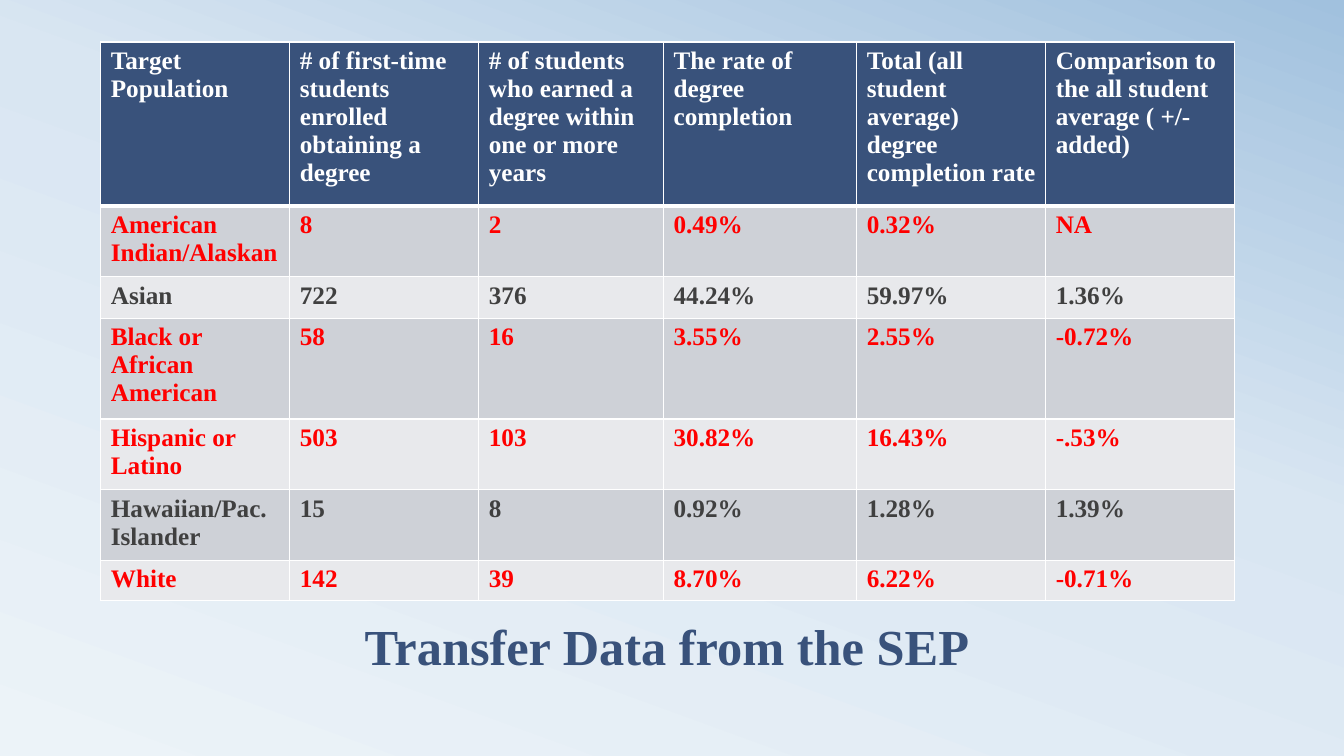
"""Build a slide with a table of transfer data by target population."""
from copy import deepcopy

from pptx import Presentation
from pptx.dml.color import RGBColor
from pptx.enum.text import MSO_ANCHOR, PP_ALIGN
from pptx.oxml import parse_xml
from pptx.oxml.ns import nsdecls, qn
from pptx.util import Pt

LEFT, CENTER = PP_ALIGN.LEFT, PP_ALIGN.CENTER
BOTTOM = MSO_ANCHOR.BOTTOM

TITLE = "Transfer Data from the SEP "
HEAD = (
    "Target Population",
    "# of first-time students enrolled obtaining a degree",
    "# of students who earned a degree within one or more years",
    "The rate of degree completion",
    "Total (all student average) degree completion rate",
    "Comparison to the all student average ( +/- added)",
)
NAVY, WHITE, RED, GRAY = "39527B", "FFFFFF", "FF0000", "404040"
BANDS = ("E8E9EC", "CED1D7")
GROUPS = [
    (RED, ("American Indian/Alaskan", "8", "2", "0.49%", "0.32%", "NA")),
    (GRAY, ("Asian", "722", "376", "44.24%", "59.97%", "1.36%")),
    (RED, ("Black or African American", "58", "16", "3.55%", "2.55%", "-0.72%")),
    (RED, ("Hispanic or Latino", "503", "103", "30.82%", "16.43%", "-.53%")),
    (GRAY, ("Hawaiian/Pac.\nIslander", "15", "8", "0.92%", "1.28%", "1.39%")),
    (RED, ("White", "142", "39", "8.70%", "6.22%", "-0.71%")),
]
WIDTHS = (135, 135, 132, 138, 135, 135)
HEIGHTS = (117.3, 46.8, 29.6, 67.2, 47.2, 47.2, 27.2)
STOPS = ((0, "ECF3F8"), (0.58, "D9E6F2"), (1, "A1C1DE"))


def color(code):
    return RGBColor.from_string(code)


def write(frame, text, size=18, ink=WHITE, align=LEFT, space=1.0):
    frame.word_wrap = True
    frame.text = text
    for para in frame.paragraphs:
        para.alignment = align
        para.line_spacing = space
        font = para.runs[0].font
        font.name = "Times New Roman"
        font.size = Pt(size)
        font.bold = True
        font.color.rgb = color(ink)


def edge(cell, top, bottom):
    props = cell._tc.get_or_add_tcPr()
    sides = (("L", 1), ("R", 1), ("T", top), ("B", bottom))
    for spot, (side, width) in enumerate(sides):
        line = parse_xml(
            f'<a:ln{side} {nsdecls("a")} w="{Pt(width)}"><a:solidFill>'
            f'<a:srgbClr val="{WHITE}"/></a:solidFill></a:ln{side}>'
        )
        props.insert(spot, line)


def paint(slide):
    fill = slide.background.fill
    fill.gradient()
    fill.gradient_angle = 70
    stops = slide.element.find(".//" + qn("a:gsLst"))
    stops.append(deepcopy(stops[0]))
    for stop, (place, code) in zip(fill.gradient_stops, STOPS):
        stop.position = place
        stop.color.rgb = color(code)


def add_title(slide):
    box = slide.shapes.add_textbox(Pt(48), Pt(402), Pt(864), Pt(84))
    box.text_frame.vertical_anchor = BOTTOM
    write(box.text_frame, TITLE, size=36, ink=NAVY, align=CENTER, space=0.8)


def add_grid(slide):
    rows = [(WHITE, HEAD)] + GROUPS
    table = slide.shapes.add_table(
        len(rows), len(HEAD), Pt(72), Pt(30), Pt(sum(WIDTHS)), Pt(sum(HEIGHTS))
    ).table
    for col, width in zip(table.columns, WIDTHS):
        col.width = Pt(width)
    for r, (ink, texts) in enumerate(rows):
        table.rows[r].height = Pt(HEIGHTS[r])
        for c, text in enumerate(texts):
            cell = table.cell(r, c)
            write(cell.text_frame, text, ink=ink)
            cell.fill.solid()
            cell.fill.fore_color.rgb = color(BANDS[r % 2] if r else NAVY)
            edge(cell, 3 if r == 1 else 1, 3 if r == 0 else 1)


def main():
    deck = Presentation()
    deck.slide_width, deck.slide_height = Pt(960), Pt(540)
    slide = deck.slides.add_slide(deck.slide_layouts[6])
    paint(slide)
    add_title(slide)
    add_grid(slide)
    deck.save("out.pptx")


if __name__ == "__main__":
    main()
